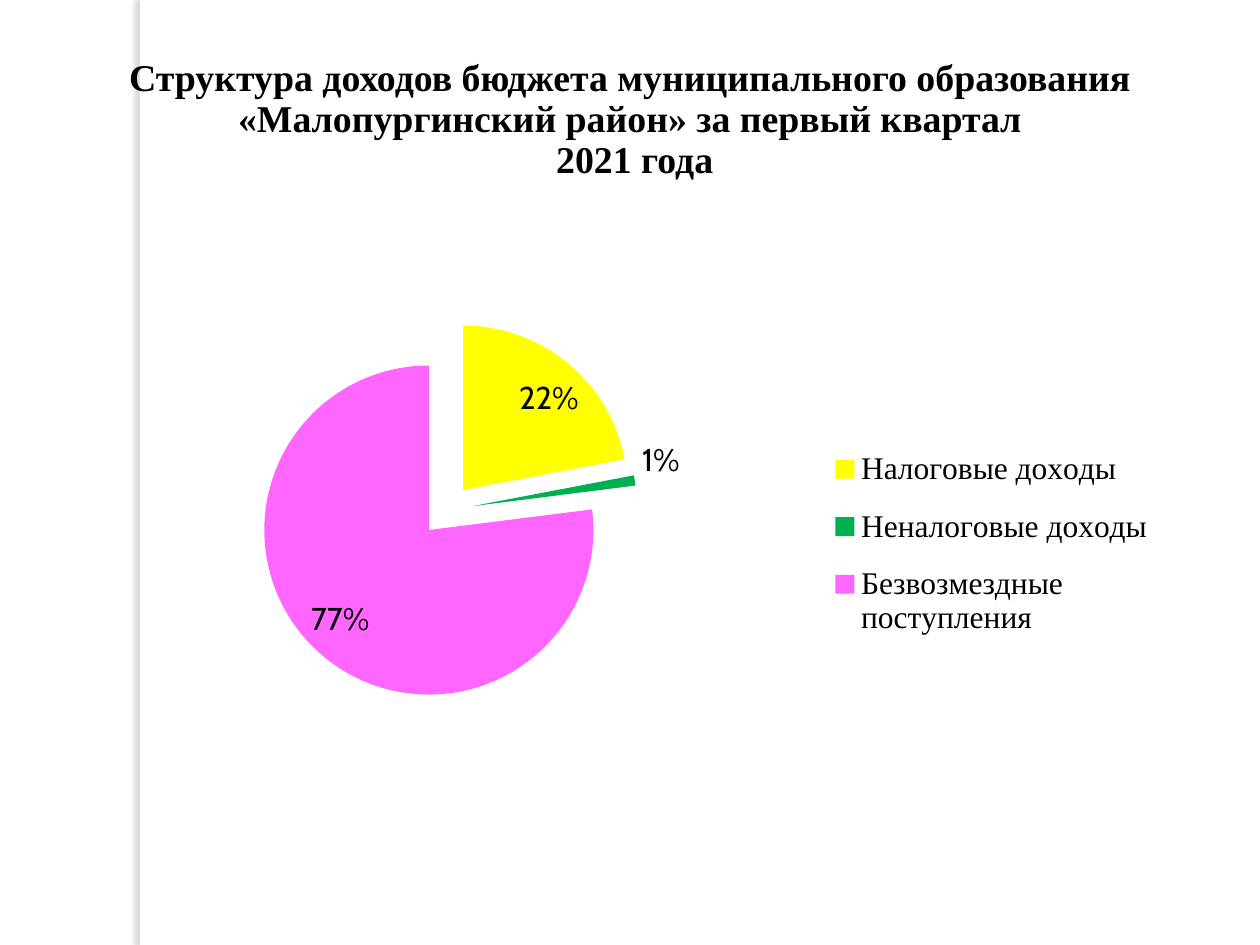
"""Build a slide with an exploded pie chart of municipal budget revenue."""
import dataclasses

import lxml.etree
import pptx
import pptx.chart.data
import pptx.dml.color
import pptx.enum.chart
import pptx.enum.shapes
import pptx.enum.text
import pptx.oxml
import pptx.oxml.ns
import pptx.slide
import pptx.util
from pptx.util import Inches

COLORS = {
    "paper": "FFFFFF",
    "ink": "000000",
    "shadow": "656E75",
    "tax": "FFFF00",
    "other": "00B050",
    "grants": "FF66FF",
}
SERIF = "Times New Roman"
TITLE = (
    "Структура доходов бюджета муниципального образования "
    "«Малопургинский район» за первый квартал\v 2021 года"
)


@dataclasses.dataclass
class Revenue:
    """One slice of the budget revenue."""

    name: str
    percent: int
    color: str


REVENUES = [
    Revenue("Налоговые доходы", 22, "tax"),
    Revenue("Неналоговые доходы", 1, "other"),
    Revenue("Безвозмездные поступления", 77, "grants"),
]


def rgb(name: str) -> pptx.dml.color.RGBColor:
    """Return the named colour."""
    return pptx.dml.color.RGBColor.from_string(COLORS[name])


def style_font(font, size: float, family: str) -> None:
    """Set size, family and the ink colour of a font."""
    font.size = pptx.util.Pt(size)
    font.name = family
    font.color.rgb = rgb("ink")


def add_margin_strip(page: pptx.slide.Slide) -> None:
    """Draw the white strip with a soft left shadow behind everything else."""
    strip = page.shapes.add_shape(
        pptx.enum.shapes.MSO_SHAPE.RECTANGLE, Inches(1.11), 0, Inches(0.08), Inches(7.5)
    )
    strip.fill.solid()
    strip.fill.fore_color.rgb = rgb("paper")
    strip.line.fill.background()
    strip.shadow.inherit = False
    effects = strip._element.spPr.find(pptx.oxml.ns.qn("a:effectLst"))
    effects.append(pptx.oxml.parse_xml(
        f'<a:outerShdw {pptx.oxml.ns.nsdecls("a")} blurRad="38100" dist="38100" '
        f'dir="10800000" algn="tl" rotWithShape="0"><a:srgbClr val="{COLORS["shadow"]}">'
        '<a:alpha val="25000"/></a:srgbClr></a:outerShdw>'
    ))
    page.shapes.title._element.addprevious(strip._element)


def set_title(page: pptx.slide.Slide) -> None:
    """Place and format the slide title."""
    title = page.shapes.title
    title.left, title.top = Inches(0.5), Inches(0.33)
    title.width, title.height = Inches(9), Inches(1.25)
    title.text_frame.text = TITLE
    title.text_frame.word_wrap = True
    title.text_frame.vertical_anchor = pptx.enum.text.MSO_ANCHOR.MIDDLE
    para = title.text_frame.paragraphs[0]
    para.alignment = pptx.enum.text.PP_ALIGN.CENTER
    para.line_spacing = 0.9
    for span in para.runs:
        style_font(span.font, 21.6, SERIF)
        span.font.bold = True


def make_layout(left: float, top: float, width: float, height: float, inner: bool = False):
    """Return a manual chart layout given in fractions of the chart."""
    qn = pptx.oxml.ns.qn
    layout = lxml.etree.Element(qn("c:layout"))
    manual = lxml.etree.SubElement(layout, qn("c:manualLayout"))
    settings = {"layoutTarget": "inner"} if inner else {}
    settings |= {"xMode": "edge", "yMode": "edge",
                 "x": left, "y": top, "w": width, "h": height}
    for tag, value in settings.items():
        lxml.etree.SubElement(manual, qn(f"c:{tag}")).set("val", str(value))
    return layout


def set_layouts(chart) -> None:
    """Fix the places of the pie and of the spread-out legend."""
    qn = pptx.oxml.ns.qn
    area = chart._chartSpace.chart.plotArea
    legend = chart.legend._element
    for owner in (area, legend):
        for old in owner.findall(qn("c:layout")):
            owner.remove(old)
    area.insert(0, make_layout(0.12, 0.18, 0.46, 0.63, inner=True))
    legend.find(qn("c:legendPos")).addnext(make_layout(0.69, 0.36, 0.29, 0.38))


def add_revenue_chart(page: pptx.slide.Slide) -> None:
    """Add the exploded pie with its labels and legend."""
    chart_data = pptx.chart.data.CategoryChartData()
    chart_data.categories = [revenue.name for revenue in REVENUES]
    chart_data.add_series("Series 1", [revenue.percent for revenue in REVENUES])
    chart = page.shapes.add_chart(
        pptx.enum.chart.XL_CHART_TYPE.PIE,
        Inches(0.42), Inches(1.67), Inches(8.92), Inches(4.81), chart_data,
    ).chart
    chart.has_title = False
    style_font(chart.font, 18, "Cabin")

    chart.has_legend = True
    chart.legend.position = pptx.enum.chart.XL_LEGEND_POSITION.RIGHT
    chart.legend.include_in_layout = False
    style_font(chart.legend.font, 18, SERIF)
    set_layouts(chart)

    plot = chart.plots[0]
    plot.vary_by_categories = True
    series = plot.series[0]
    explosion = lxml.etree.Element(pptx.oxml.ns.qn("c:explosion"), val="16")
    series._element.find(pptx.oxml.ns.qn("c:tx")).addnext(explosion)
    for index, revenue in enumerate(REVENUES):
        fill = series.points[index].format.fill
        fill.solid()
        fill.fore_color.rgb = rgb(revenue.color)

    labels = series.data_labels
    labels.show_percentage = True
    labels.show_value = False
    labels.number_format = "0%"
    labels.number_format_is_linked = False
    labels.position = pptx.enum.chart.XL_LABEL_POSITION.BEST_FIT
    style_font(labels.font, 18, "Cabin")


def main() -> None:
    """Create and save the deck."""
    deck = pptx.Presentation()
    deck.slide_width, deck.slide_height = Inches(10), Inches(7.5)
    page = deck.slides.add_slide(deck.slide_layouts[5])
    add_margin_strip(page)
    set_title(page)
    add_revenue_chart(page)
    deck.save("out.pptx")


if __name__ == "__main__":
    main()
